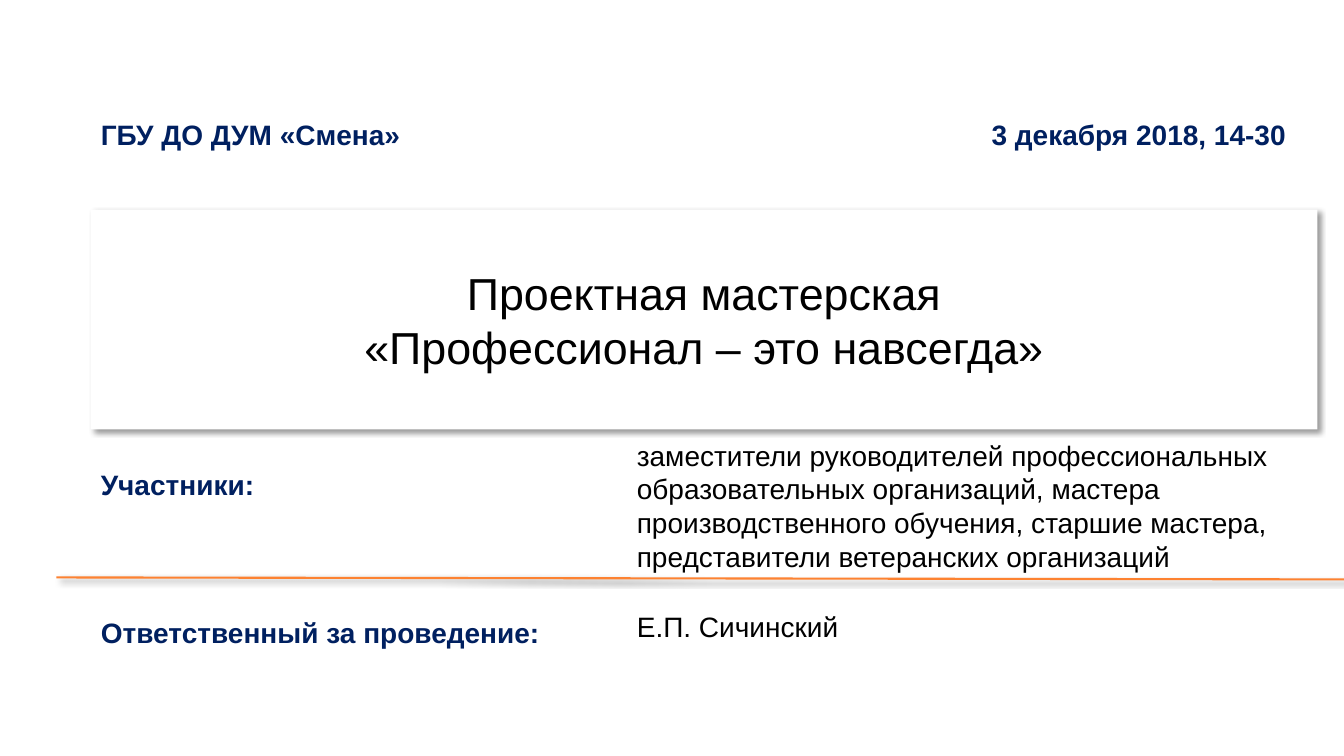
import lxml.etree
import pptx
import pptx.dml.color
import pptx.enum.shapes
import pptx.enum.text
import pptx.oxml
import pptx.oxml.ns
import pptx.util

Cm = pptx.util.Cm
COLORS = {"background": "FFFFFF", "text": "000000", "label": "002060",
          "divider": "FD8231", "shadow": "000000"}
LABEL = {"name": "Arial", "size": pptx.util.Pt(20), "bold": True}
DETAIL = {"name": "Arial", "size": pptx.util.Pt(20), "bold": False}
TITLE = {"name": "Arial", "size": pptx.util.Pt(32), "bold": False}


def format_text(paragraph, font_format, color):
    for attribute, value in font_format.items():
        setattr(paragraph.font, attribute, value)
    paragraph.font.color.rgb = pptx.dml.color.RGBColor.from_string(COLORS[color])


def add_shadow(shape):
    effects = pptx.oxml.parse_xml(
        f'<a:effectLst {pptx.oxml.ns.nsdecls("a")}>'
        '<a:outerShdw blurRad="50800" dist="38100" dir="2700000" algn="tl" rotWithShape="0">'
        f'<a:srgbClr val="{COLORS["shadow"]}"><a:alpha val="40000"/></a:srgbClr>'
        '</a:outerShdw></a:effectLst>')
    shape._element.spPr.append(effects)


presentation = pptx.Presentation()
presentation.slide_width = Cm(33.87)
presentation.slide_height = Cm(19.05)
slide = presentation.slides.add_slide(presentation.slide_layouts[5])

title = slide.shapes.title
title.left, title.top, title.width, title.height = Cm(2.29), Cm(5.28), Cm(30.91), Cm(5.54)
title.fill.solid()
title.fill.fore_color.rgb = pptx.dml.color.RGBColor.from_string(COLORS["background"])
add_shadow(title)
title.text_frame.text = "Проектная мастерская\v«Профессионал – это навсегда»"
title.text_frame.auto_size = pptx.enum.text.MSO_AUTO_SIZE.NONE
title.text_frame.vertical_anchor = pptx.enum.text.MSO_ANCHOR.MIDDLE
title.text_frame.paragraphs[0].alignment = pptx.enum.text.PP_ALIGN.CENTER
format_text(title.text_frame.paragraphs[0], TITLE, "text")

divider = slide.shapes.add_connector(
    pptx.enum.shapes.MSO_CONNECTOR.STRAIGHT, Cm(1.42), Cm(14.55), Cm(33.87), Cm(14.6))
divider.line.color.rgb = pptx.dml.color.RGBColor.from_string(COLORS["divider"])
divider.line.width = pptx.util.Pt(1.5)
add_shadow(divider)

participants = ("заместители руководителей профессиональных образовательных организаций, "
                "мастера производственного обучения, старшие мастера, "
                "представители ветеранских организаций")
text_boxes = [
    ("ГБУ ДО ДУМ «Смена»", 2.29, 2.84, 8.13, 1.11, LABEL, "label"),
    ("3 декабря 2018, 14-30", 24.74, 2.84, 7.98, 1.11, LABEL, "label"),
    (participants, 15.8, 10.92, 16.94, 3.68, DETAIL, "text"),
    ("Участники:", 2.29, 11.66, 4.42, 1.11, LABEL, "label"),
    ("Ответственный за проведение:", 2.29, 15.39, 11.66, 1.11, LABEL, "label"),
    ("Е.П. Сичинский", 15.8, 15.24, 16.94, 1.11, DETAIL, "text"),
]
for text, left, top, width, height, font_format, color in text_boxes:
    text_box = slide.shapes.add_textbox(Cm(left), Cm(top), Cm(width), Cm(height))
    text_frame = text_box.text_frame
    text_frame.text = text
    text_frame.word_wrap = font_format is DETAIL
    text_frame.auto_size = pptx.enum.text.MSO_AUTO_SIZE.SHAPE_TO_FIT_TEXT
    format_text(text_frame.paragraphs[0], font_format, color)

presentation.save("out.pptx")
